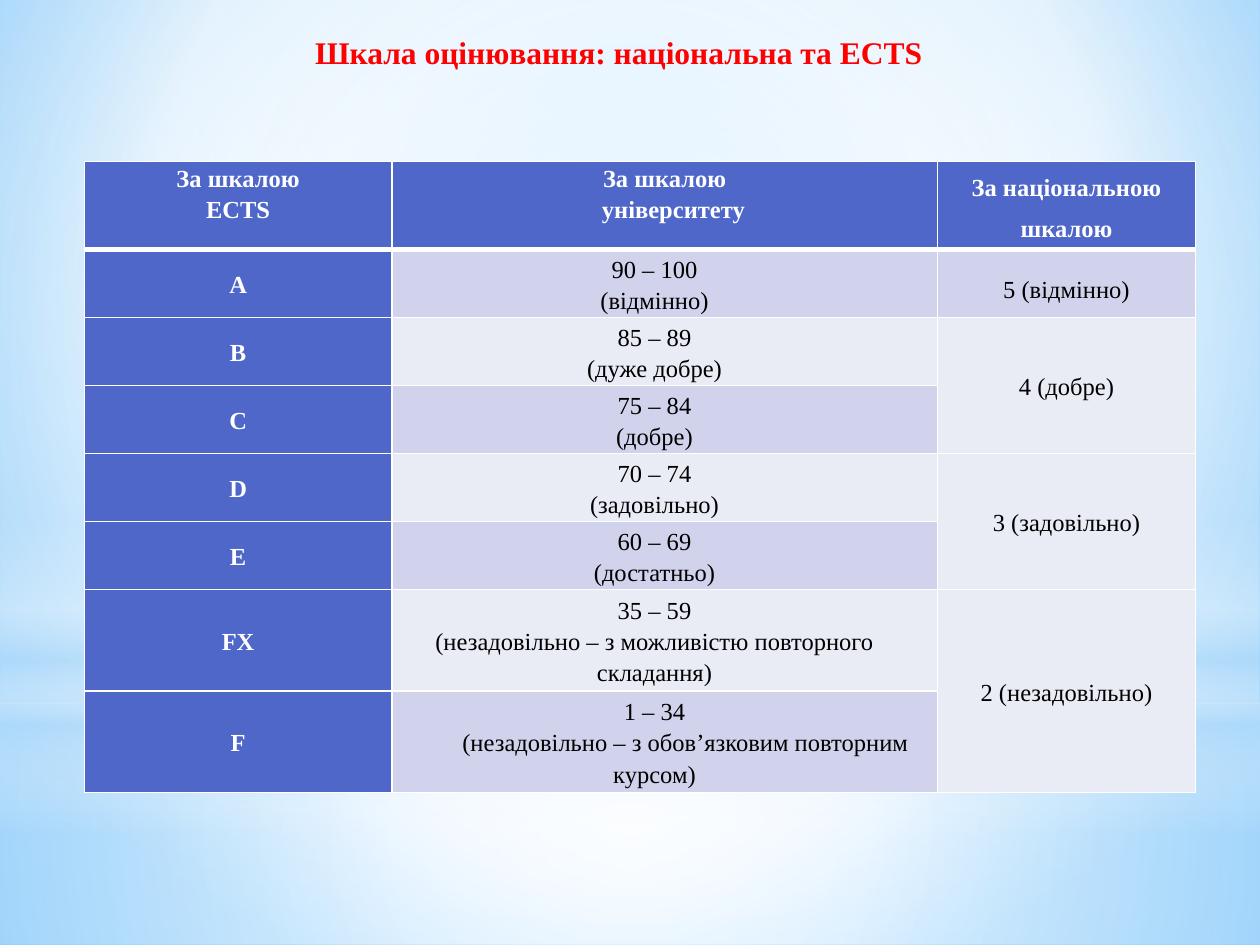
from lxml.etree import SubElement
from pptx import Presentation
from pptx.dml.color import RGBColor
from pptx.enum.shapes import MSO_SHAPE
from pptx.enum.text import MSO_ANCHOR, MSO_AUTO_SIZE, PP_ALIGN
from pptx.oxml.ns import qn
from pptx.util import Inches, Pt

FONT = "Times New Roman"
WHITE, BLACK, RED = "FFFFFF", "000000", "FF0000"
INDIGO, LAVENDER, PALE = "4E67C8", "D0D3EB", "E9EBF5"
SKY = "B4DCFA"
CENTRE = (50, 50, 50, 50)

HEADINGS = ["За шкалою\nECTS", "За шкалою\nуніверситету", "За національною шкалою"]
GRADES = [
    ("A", "90 – 100\n(відмінно)"),
    ("B", "85 – 89\n(дуже добре)"),
    ("C", "75 – 84\n(добре)"),
    ("D", "70 – 74\n(задовільно)"),
    ("E", "60 – 69\n(достатньо)"),
    ("FX", "35 – 59\n(незадовільно – з можливістю повторного складання)"),
    ("F", "1 – 34\n(незадовільно – з обов’язковим повторним курсом)"),
]
NATIONAL = [
    (1, 1, "5 (відмінно)"),
    (2, 3, "4 (добре)"),
    (4, 5, "3 (задовільно)"),
    (6, 7, "2 (незадовільно)"),
]
COLUMN_WIDTHS = [2.44, 4.33, 2.05]
ROW_HEIGHTS = [0.69] + [0.54] * 5 + [0.8] * 2

GLOWS = [
    (MSO_SHAPE.RECTANGLE, (0, 5.58, 10, 1.92),
     [(0, WHITE, 91), (37, WHITE, 76), (100, SKY, 79)], CENTRE),
    (MSO_SHAPE.RECTANGLE, (0, 0, 10, 5.58),
     [(0, WHITE, 89), (48, WHITE, 62), (100, SKY, 79)], CENTRE),
    (MSO_SHAPE.RECTANGLE, (0, 4.12, 10, 2.5),
     [(0, WHITE, 0), (29, WHITE, 30), (45, SKY, 40),
      (55, WHITE, 26), (65, SKY, 60), (100, WHITE, 0)], None),
    (MSO_SHAPE.OVAL, (0, 1.75, 10, 5.58),
     [(0, WHITE, 100), (56, WHITE, 0)], CENTRE),
]


def rgb(value):
    return RGBColor.from_string(value)


def apply_format(target, values):
    for name, value in values.items():
        setattr(target, name, value)


def format_font(font, size, color, bold):
    apply_format(font, {"name": FONT, "size": Pt(size), "bold": bold})
    font.color.rgb = rgb(color)


def paint_gradient(fill, stops, focus):
    fill.gradient()
    gradient = fill._xPr.find(qn("a:gradFill"))
    for child in list(gradient):
        gradient.remove(child)
    stop_list = SubElement(gradient, qn("a:gsLst"))
    for position, color, opacity in stops:
        stop = SubElement(stop_list, qn("a:gs"), pos=str(position * 1000))
        tint = SubElement(stop, qn("a:srgbClr"), val=color)
        if opacity < 100:
            SubElement(tint, qn("a:alpha"), val=str(opacity * 1000))
    if focus is None:
        SubElement(gradient, qn("a:lin"), ang="5400000", scaled="0")
    else:
        circle = SubElement(gradient, qn("a:path"), path="circle")
        sides = {side: str(inset * 1000) for side, inset in zip("ltrb", focus)}
        SubElement(circle, qn("a:fillToRect"), **sides)


def build_backdrop(slide, master):
    paint_gradient(master.background.fill,
                   [(0, "9ED5FF", 100), (60, WHITE, 100), (100, "5BB9FF", 100)],
                   (20, 10, 20, 60))
    for order, (outline, box, stops, focus) in enumerate(GLOWS):
        glow = slide.shapes.add_shape(outline, *map(Inches, box))
        glow.shadow.inherit = False
        glow.line.fill.background()
        paint_gradient(glow.fill, stops, focus)
        glow._element.nvSpPr.cNvPr.set("id", str(100 + order))
        master.shapes._spTree.insert(2 + order, glow._element)


def build_title(title, left, top, width, height):
    apply_format(title, {"left": Inches(left), "top": Inches(top),
                         "width": Inches(width), "height": Inches(height)})
    frame = title.text_frame
    frame.text = "Шкала оцінювання: національна та ECTS"
    apply_format(frame, {"word_wrap": False, "vertical_anchor": MSO_ANCHOR.TOP,
                         "auto_size": MSO_AUTO_SIZE.SHAPE_TO_FIT_TEXT})
    heading = frame.paragraphs[0]
    heading.alignment = PP_ALIGN.LEFT
    format_font(heading.runs[0].font, 18, RED, True)


def draw_borders(cell, top, bottom):
    properties = cell._tc.get_or_add_tcPr()
    for side, weight in {"L": 1, "R": 1, "T": top, "B": bottom}.items():
        border = SubElement(properties, qn(f"a:ln{side}"), w=str(Pt(weight)))
        paint = SubElement(border, qn("a:solidFill"))
        SubElement(paint, qn("a:srgbClr"), val=WHITE)


def style_cell(cell, fill, color, bold, anchor, spacing=1.15, right=0.02):
    apply_format(cell, {"margin_left": Inches(0.02), "margin_right": Inches(right),
                        "margin_top": 0, "margin_bottom": 0,
                        "vertical_anchor": anchor})
    cell.fill.solid()
    cell.fill.fore_color.rgb = rgb(fill)
    for paragraph in cell.text_frame.paragraphs:
        apply_format(paragraph, {"alignment": PP_ALIGN.CENTER, "line_spacing": spacing})
        for run in paragraph.runs:
            format_font(run.font, 14, color, bold)


def indent_second_line(cell, indent):
    properties = cell.text_frame.paragraphs[1]._p.get_or_add_pPr()
    properties.set("marL", "0")
    properties.set("indent", str(Inches(indent)))


def build_scale(slide, left, top, width, height):
    scale = slide.shapes.add_table(len(ROW_HEIGHTS), len(COLUMN_WIDTHS), Inches(left),
                                   Inches(top), Inches(width), Inches(height)).table
    for column, column_width in zip(scale.columns, COLUMN_WIDTHS):
        column.width = Inches(column_width)
    for index, row_height in enumerate(ROW_HEIGHTS):
        scale.rows[index].height = Inches(row_height)
        for cell in scale.rows[index].cells:
            draw_borders(cell, 3 if index == 1 else 1, 3 if index == 0 else 1)

    for column, heading in enumerate(HEADINGS):
        cell = scale.cell(0, column)
        cell.text = heading
        style_cell(cell, INDIGO, WHITE, True, MSO_ANCHOR.TOP, 1.5 if column == 2 else 1.15)
    for row, (letter, points) in enumerate(GRADES, 1):
        band = LAVENDER if row % 2 else PALE
        letter_cell, points_cell = scale.cell(row, 0), scale.cell(row, 1)
        letter_cell.text, points_cell.text = letter, points
        style_cell(letter_cell, INDIGO, WHITE, True, MSO_ANCHOR.MIDDLE)
        style_cell(points_cell, band, BLACK, False, MSO_ANCHOR.MIDDLE, right=0.18)
    for first, last, mark in NATIONAL:
        cell = scale.cell(first, 2)
        if last > first:
            cell.merge(scale.cell(last, 2))
        cell.text = mark
        style_cell(cell, LAVENDER if first == 1 else PALE, BLACK, False,
                   MSO_ANCHOR.MIDDLE, 1.5 if first == 1 else 1.15)
    indent_second_line(scale.cell(0, 1), 0.14)
    indent_second_line(scale.cell(len(GRADES), 1), 0.49)


def main():
    presentation = Presentation()
    apply_format(presentation, {"slide_width": Inches(10), "slide_height": Inches(7.5)})
    slide = presentation.slides.add_slide(presentation.slide_layouts[5])
    build_backdrop(slide, presentation.slide_master)
    build_title(slide.shapes.title, 2.4, 0.21, 5.07, 0.4)
    build_scale(slide, 0.67, 1.28, sum(COLUMN_WIDTHS), sum(ROW_HEIGHTS))
    presentation.save("out.pptx")


if __name__ == "__main__":
    main()
